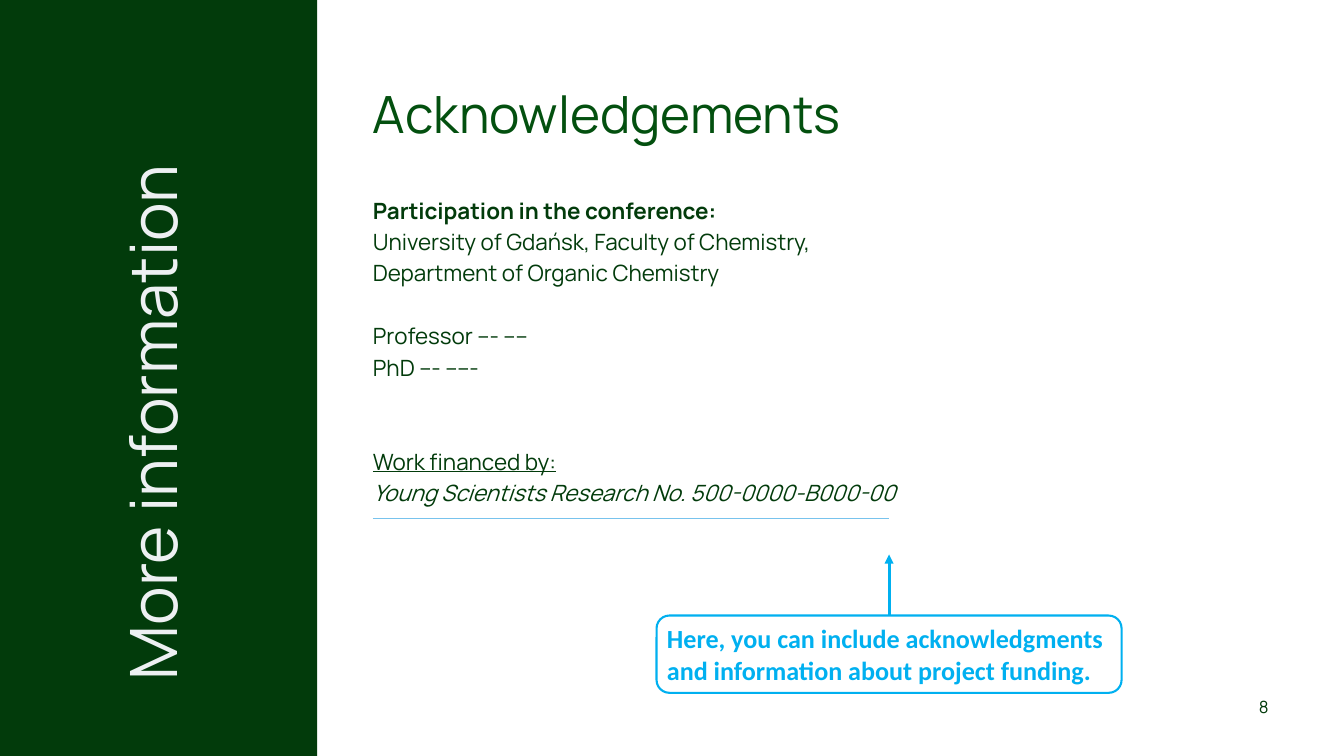
"""Build the acknowledgements slide with its side banner and funding callout."""
from lxml import etree
from pptx import Presentation
from pptx.dml.color import RGBColor
from pptx.enum import shapes, text
from pptx.oxml.ns import qn
from pptx.util import Inches, Pt

WIDTH, HEIGHT = 20, 11.25
BANNER, MARGIN, ARROW = 4.72, 5.55, 13.23
CALLOUT_TOP, CALLOUT_HEIGHT = 9.16, 1.15
GREEN, TITLE_GREEN, PALE = "023B0B", "03500F", "EDF0F2"
RULE_BLUE, BLUE = "78C3ED", "00B0F0"
LEADING = 33.6

TITLE = "Acknowledgements"
SECTION = "More information"
PAGE_NUMBER = "8"
HEADING = "Participation in the conference:"
CALLOUT = "Here, you can include acknowledgments and information about project funding."
# Each entry: wording, skipped lines above, font style
CREDITS = [
    ("University of Gdańsk, Faculty of Chemistry,", 0, {}),
    ("Department of Organic Chemistry", 0, {}),
    ("Professor --- ----", 1, {}),
    ("PhD --- -----", 0, {}),
    ("Work financed by:", 2, {"underline": True}),
    ("Young Scientists Research No. 500-0000-B000-00", 0, {"italic": True}),
]


def color(value):
    return RGBColor.from_string(value)


def style(para, size, shade, leading=None, name="Manrope", align=text.PP_ALIGN.LEFT, **looks):
    para.alignment = align
    para.space_before = Pt(0)
    if leading:
        para.line_spacing = Pt(leading)
    for span in para.runs:
        span.font.name, span.font.size = name, Pt(size)
        span.font.color.rgb = color(shade)
        for look, value in looks.items():
            setattr(span.font, look, value)


def set_frame(box, wording):
    frame = box.text_frame
    frame.text = wording
    frame.word_wrap = True
    frame.auto_size = text.MSO_AUTO_SIZE.NONE
    frame.vertical_anchor = text.MSO_ANCHOR.TOP
    frame.margin_left = frame.margin_right = frame.margin_top = frame.margin_bottom = 0
    return frame.paragraphs


def add_text(page, area, wording):
    box = page.shapes.add_textbox(*map(Inches, area))
    return box, set_frame(box, wording)


def add_line(page, start, end, shade, width):
    line = page.shapes.add_connector(
        shapes.MSO_CONNECTOR.STRAIGHT, *map(Inches, start + end))
    line.line.color.rgb = color(shade)
    line.line.width = Pt(width)
    etree.SubElement(line._element.spPr, qn("a:effectLst"))
    return line


def add_panel(page, kind, area):
    panel = page.shapes.add_shape(kind, *map(Inches, area))
    panel.shadow.inherit = False
    return panel


def main():
    deck = Presentation()
    deck.slide_width, deck.slide_height = Inches(WIDTH), Inches(HEIGHT)
    page = deck.slides.add_slide(deck.slide_layouts[5])

    title = page.shapes.title
    title.left, title.top, title.width, title.height = map(Inches, (MARGIN, 1.38, 12.02, 0.79))
    style(set_frame(title, TITLE)[0], 55, TITLE_GREEN, 55)

    banner = add_panel(page, shapes.MSO_SHAPE.RECTANGLE, (0, 0, BANNER, HEIGHT))
    banner.fill.solid()
    banner.fill.fore_color.rgb = color(GREEN)
    banner.line.fill.background()

    section, paras = add_text(page, (-1.95, 5.23, 8.71, 1.08), SECTION)
    section.rotation = 270
    style(paras[0], 70, PALE, 70)

    paras = add_text(page, (MARGIN, 2.86, 8.9, 0.45), HEADING)[1]
    style(paras[0], 24, GREEN, LEADING, bold=True)

    wording = "\n".join(credit[0] for credit in CREDITS)
    paras = add_text(page, (MARGIN, 3.33, 8.9, 4.74), wording)[1]
    for para, (_, skipped, looks) in zip(paras, CREDITS):
        style(para, 24, GREEN, LEADING, **looks)
        para.space_before = Pt(skipped * LEADING)

    paras = add_text(page, (17.31, 10.32, 1.57, 0.36), PAGE_NUMBER)[1]
    style(paras[0], 18, GREEN, 25.2, align=text.PP_ALIGN.RIGHT)

    add_line(page, (MARGIN, 7.72), (ARROW, 7.72), RULE_BLUE, 1.5)

    callout = add_panel(page, shapes.MSO_SHAPE.ROUNDED_RECTANGLE,
                        (9.77, CALLOUT_TOP, 6.92, CALLOUT_HEIGHT))
    callout.fill.background()
    callout.line.color.rgb = color(BLUE)
    callout.line.width = Pt(2.25)
    callout.text_frame.text = CALLOUT
    callout.text_frame.word_wrap = True
    callout.text_frame.vertical_anchor = text.MSO_ANCHOR.MIDDLE
    style(callout.text_frame.paragraphs[0], 28, BLUE, name="Calibri", bold=True)

    arrow = add_line(page, (ARROW, CALLOUT_TOP), (ARROW, 8.25), BLUE, 3.25)
    etree.SubElement(arrow.line._get_or_add_ln(), qn("a:tailEnd"), type="triangle")

    deck.save("out.pptx")


if __name__ == "__main__":
    main()
